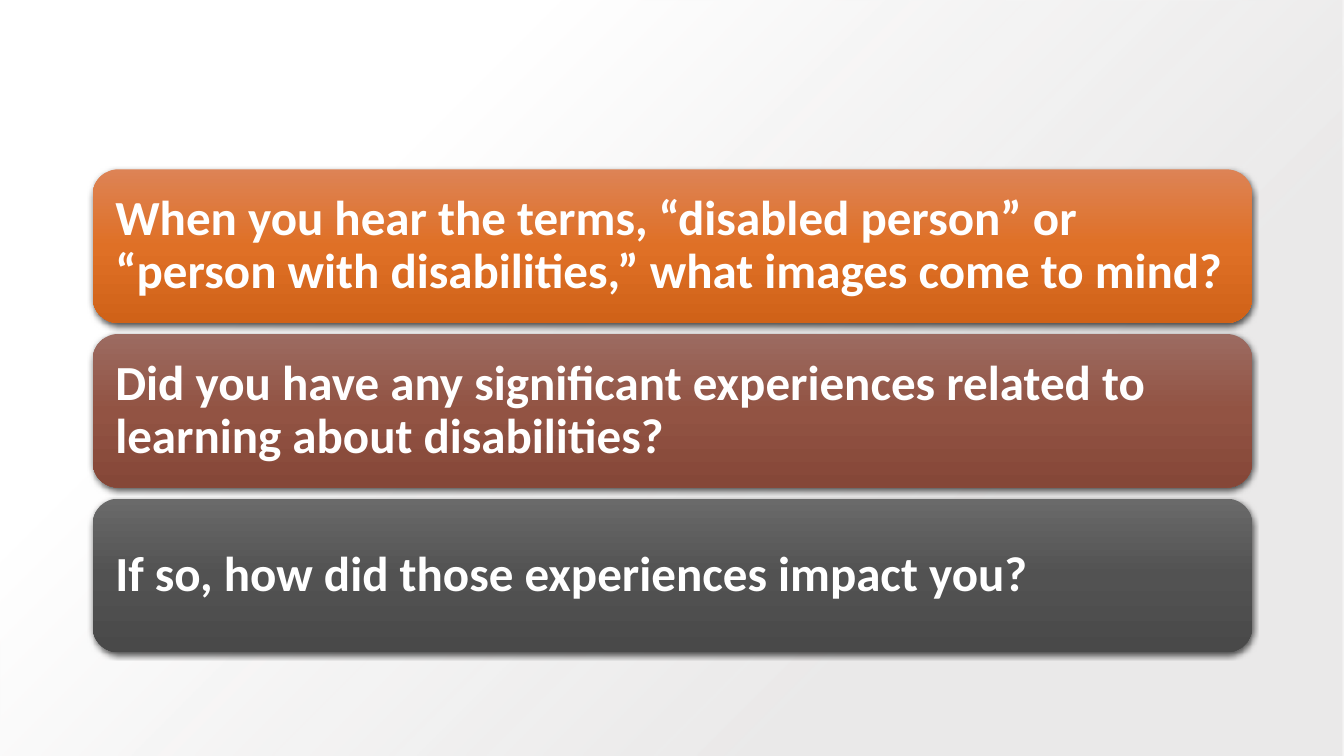
from lxml import etree
from pptx import Presentation
from pptx.dml.color import RGBColor
from pptx.enum.shapes import MSO_SHAPE
from pptx.enum.text import MSO_ANCHOR, PP_ALIGN
from pptx.oxml import parse_xml
from pptx.oxml.ns import nsdecls, qn
from pptx.util import Inches, Pt

RECT, ROUND_RECT = MSO_SHAPE.RECTANGLE, MSO_SHAPE.ROUNDED_RECTANGLE
LEFT, MIDDLE = PP_ALIGN.LEFT, MSO_ANCHOR.MIDDLE

WHITE = RGBColor(0xFF, 0xFF, 0xFF)
BLACK = RGBColor(0x00, 0x00, 0x00)
LIGHT_GRAY = RGBColor(0xE7, 0xE6, 0xE6)
ORANGE = [RGBColor(0xDD, 0x83, 0x55), RGBColor(0xDF, 0x70, 0x26), RGBColor(0xD0, 0x62, 0x18)]
BROWN = [RGBColor(0x9C, 0x6B, 0x61), RGBColor(0x92, 0x53, 0x43), RGBColor(0x85, 0x47, 0x38)]
GRAY = [RGBColor(0x6A, 0x6A, 0x6A), RGBColor(0x52, 0x52, 0x52), RGBColor(0x49, 0x49, 0x49)]

DOWNWARD = '<a:lin ang="5400000" scaled="0"/>'
FROM_BOTTOM_RIGHT = '<a:path path="circle"><a:fillToRect l="100000" t="100000"/></a:path>'

QUESTIONS = [
    ("When you hear the terms, “disabled person” or “person with disabilities,” "
     "what images come to mind?", ORANGE),
    ("Did you have any significant experiences related to learning about disabilities?", BROWN),
    ("If so, how did those experiences impact you?", GRAY),
]


def add_gradient_shape(slide, kind, box, stops, direction):
    """Add a borderless shape; stops are (percent, colour, opacity percent)."""
    s = slide.shapes.add_shape(kind, *(Inches(v) for v in box))
    s.line.fill.background()
    s.shadow.inherit = False
    s.fill.background()
    gs = "".join(
        f'<a:gs pos="{pos * 1000}"><a:srgbClr val="{color}">'
        f'<a:alpha val="{opacity * 1000}"/></a:srgbClr></a:gs>'
        for pos, color, opacity in stops)
    grad = parse_xml(f'<a:gradFill {nsdecls("a")} rotWithShape="1">'
                     f'<a:gsLst>{gs}</a:gsLst>{direction}</a:gradFill>')
    spPr = s._element.spPr
    spPr.replace(spPr.find(qn("a:noFill")), grad)
    return s


def add_shadow(s):
    effects = s._element.spPr.find(qn("a:effectLst"))
    shadow = etree.SubElement(effects, qn("a:outerShdw"), blurRad=str(Pt(4.5)),
                              dist=str(Pt(1.5)), dir="5400000", algn="ctr", rotWithShape="0")
    color = etree.SubElement(shadow, qn("a:srgbClr"), val=str(BLACK))
    etree.SubElement(color, qn("a:alpha"), val="63000")


def set_text(s, text, size=35, font="Calibri", color=WHITE, bold=True, inset=0.15):
    tf = s.text_frame
    tf.word_wrap = True
    tf.vertical_anchor = MIDDLE
    tf.margin_left = tf.margin_right = tf.margin_top = tf.margin_bottom = Inches(inset)
    p = tf.paragraphs[0]
    p.alignment = LEFT
    p.line_spacing = 0.9
    r = p.add_run()
    r.text = text
    r.font.size, r.font.name, r.font.bold = Pt(size), font, bold
    r.font.color.rgb = color


def add_background(slide, box):
    stops = [(28, LIGHT_GRAY, 84), (74, WHITE, 100)]
    add_gradient_shape(slide, RECT, box, stops, FROM_BOTTOM_RIGHT)


def add_questions(slide, box, gap=0.11):
    """Stack one banner per question, evenly spaced in the box."""
    x, y, w, h = box
    banner_h = (h - gap * (len(QUESTIONS) - 1)) / len(QUESTIONS)
    for i, (text, colors) in enumerate(QUESTIONS):
        stops = [(pos, color, 100) for pos, color in zip((0, 50, 100), colors)]
        banner = (x, y + i * (banner_h + gap), w, banner_h)
        s = add_gradient_shape(slide, ROUND_RECT, banner, stops, DOWNWARD)
        add_shadow(s)
        set_text(s, text)


def main():
    prs = Presentation()
    prs.slide_width, prs.slide_height = Inches(13.33), Inches(7.5)
    slide = prs.slides.add_slide(prs.slide_layouts[6])
    add_background(slide, (0, 0, 13.33, 7.5))
    add_questions(slide, (0.92, 1.68, 11.5, 4.79))
    prs.save("out.pptx")


if __name__ == "__main__":
    main()
